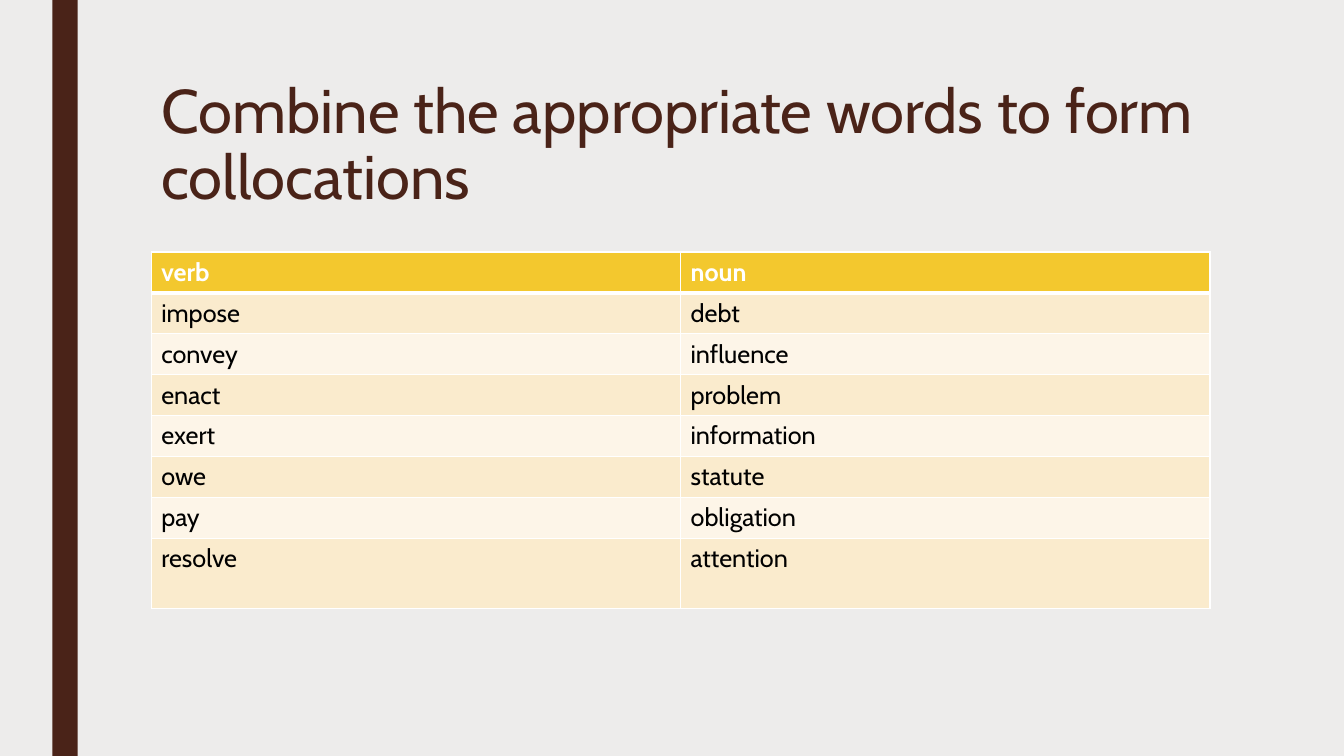
from lxml import etree
from pptx import Presentation
from pptx.dml.color import RGBColor
from pptx.enum import shapes, text
from pptx.oxml.ns import qn
from pptx.util import Inches, Pt

TITLE = "Combine the appropriate words to form collocations"
ROWS = [
    ("verb", "noun"),
    ("impose", "debt"),
    ("convey", "influence"),
    ("enact", "problem"),
    ("exert", "information"),
    ("owe", "statute"),
    ("pay", "obligation"),
    ("resolve", "attention"),
]
THEME = {
    "font": "Cabin", "title_size": 44, "cell_size": 18,
    "background": "EDECEB", "brown": "4A2318", "header": "F3C82E",
    "bands": ("FDF5E8", "FAEBCD"), "white": "FFFFFF", "black": "000000",
}
LEFT, WIDTH = 1.5, 10.5
ROW_HEIGHT, LAST_ROW_HEIGHT = 0.405, 0.7


def paint(fill, color):
    fill.solid()
    fill.fore_color.rgb = RGBColor.from_string(color)


def write(tf, content, size, color, bold=False):
    p = tf.paragraphs[0]
    r = p.add_run()
    r.text = content
    style = {"name": THEME["font"], "size": Pt(size), "bold": bold}
    for name, value in style.items():
        setattr(r.font, name, value)
    r.font.color.rgb = RGBColor.from_string(color)
    return p


def add_borders(cell, widths):
    """Draw white cell borders; widths maps each side (L, R, T, B) to points."""
    tc_pr = cell._tc.get_or_add_tcPr()
    for i, (side, width) in enumerate(widths.items()):
        ln = etree.Element(qn(f"a:ln{side}"), w=str(Pt(width)))
        fill = etree.SubElement(ln, qn("a:solidFill"))
        etree.SubElement(fill, qn("a:srgbClr"), val=THEME["white"])
        tc_pr.insert(i, ln)


def add_title(s):
    sp = s.shapes.title
    box = {"left": LEFT, "top": 0.75, "width": WIDTH, "height": 1.62}
    for name, value in box.items():
        setattr(sp, name, Inches(value))
    tf = sp.text_frame
    tf.word_wrap = True
    tf.auto_size = text.MSO_AUTO_SIZE.NONE
    tf.vertical_anchor = text.MSO_ANCHOR.TOP
    p = write(tf, TITLE, THEME["title_size"], THEME["brown"])
    p.alignment = text.PP_ALIGN.LEFT
    p.line_spacing = 0.89


def add_word_table(s):
    heights = [ROW_HEIGHT] * (len(ROWS) - 1) + [LAST_ROW_HEIGHT]
    table = s.shapes.add_table(
        len(ROWS), len(ROWS[0]), Inches(LEFT), Inches(2.5),
        Inches(WIDTH), Inches(sum(heights))).table
    for i, (words, height) in enumerate(zip(ROWS, heights)):
        table.rows[i].height = Inches(height)
        is_header = i == 0
        fill = THEME["header"] if is_header else THEME["bands"][i % 2]
        color = THEME["white"] if is_header else THEME["black"]
        widths = {"L": 1, "R": 1, "T": 3 if i == 1 else 1, "B": 3 if is_header else 1}
        for j, word in enumerate(words):
            cell = table.cell(i, j)
            paint(cell.fill, fill)
            add_borders(cell, widths)
            write(cell.text_frame, word, THEME["cell_size"], color, is_header)


def main():
    prs = Presentation()
    prs.slide_width, prs.slide_height = Inches(13.33), Inches(7.5)
    s = prs.slides.add_slide(prs.slide_layouts[5])
    paint(s.background.fill, THEME["background"])

    bar = s.shapes.add_shape(shapes.MSO_SHAPE.RECTANGLE, Inches(0.52), 0,
                             Inches(0.25), prs.slide_height)
    paint(bar.fill, THEME["brown"])
    bar.line.fill.background()
    bar.shadow.inherit = False

    add_title(s)
    add_word_table(s)
    prs.save("out.pptx")


if __name__ == "__main__":
    main()
